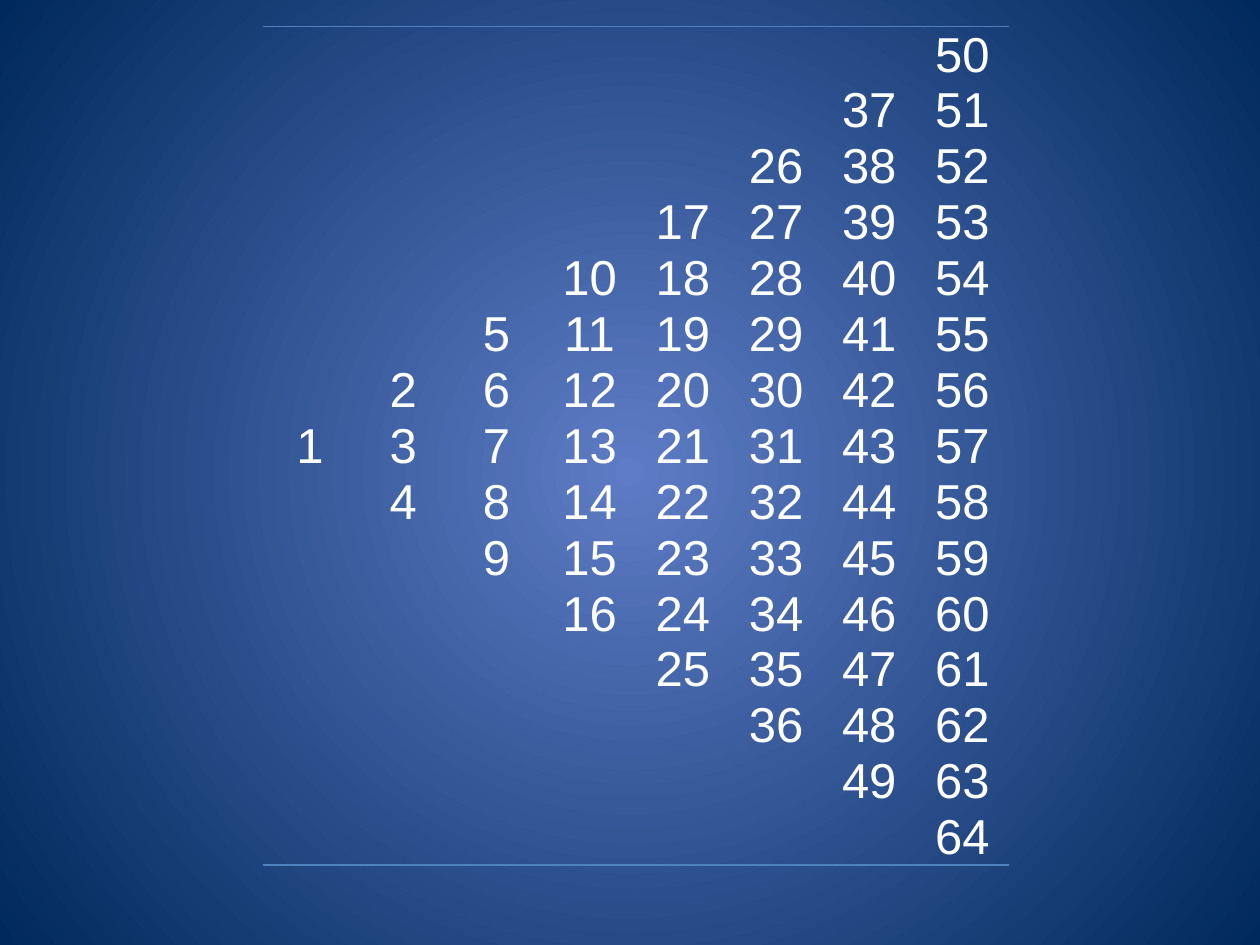
import dataclasses

import lxml.etree
import pptx
import pptx.dml.color
import pptx.enum.text
import pptx.oxml
import pptx.oxml.ns
import pptx.util

Inches = pptx.util.Inches
qn = pptx.oxml.ns.qn


@dataclasses.dataclass(frozen=True)
class Theme:
    center: str = "5E7CC5"
    edge: str = "00295C"
    rule: str = "4F81BD"
    text: str = "FFFFFF"
    font: str = "Arial"
    number_size: int = 28
    rule_width: int = 1


THEME = Theme()
COLUMNS = 8
ROWS = 2 * COLUMNS - 1
NO_GRID_STYLE = "{2D5ABB26-0587-4C30-8999-92F81FD0307C}"


def rgb(value):
    return pptx.dml.color.RGBColor.from_string(value)


def set_radial_background(slide, center, edge):
    fill = slide.background.fill
    fill.gradient()
    for stop, color in zip(fill.gradient_stops, (center, edge)):
        stop.color.rgb = rgb(color)
    gradient = slide.background._cSld.find(".//" + qn("a:gradFill"))
    linear = gradient.find(qn("a:lin"))
    radial = lxml.etree.Element(qn("a:path"), {"path": "circle"})
    lxml.etree.SubElement(radial, qn("a:fillToRect"), {side: "50000" for side in "ltrb"})
    gradient.replace(linear, radial)


def write_text(cell, text, *, size, color, font):
    cell.vertical_anchor = pptx.enum.text.MSO_ANCHOR.BOTTOM
    cell.margin_left = cell.margin_right = cell.margin_top = Inches(0.01)
    cell.margin_bottom = 0
    paragraph = cell.text_frame.paragraphs[0]
    paragraph.alignment = pptx.enum.text.PP_ALIGN.CENTER
    run = paragraph.add_run()
    run.text = text
    run.font.size = pptx.util.Pt(size)
    run.font.name = font
    run.font.color.rgb = rgb(color)


def add_border(cell, tag, *, color, width):
    line = lxml.etree.Element(qn(tag), {"w": str(pptx.util.Pt(width))})
    fill = lxml.etree.SubElement(line, qn("a:solidFill"))
    lxml.etree.SubElement(fill, qn("a:srgbClr"), {"val": color})
    cell._tc.get_or_add_tcPr().insert(0, line)


def add_plain_table(slide, left, top, column_width, row_height):
    frame = slide.shapes.add_table(
        ROWS, COLUMNS, left, top, column_width * COLUMNS, row_height * ROWS)
    table = frame.table
    table.first_row = table.horz_banding = False
    table._tbl.tblPr.find(qn("a:tableStyleId")).text = NO_GRID_STYLE
    for cell in table.iter_cells():
        cell.fill.background()
    return table


def fill_number_triangle(table):
    """Column n holds the numbers after n squared up to the next square, centred vertically."""
    for column in range(COLUMNS):
        first_row = COLUMNS - 1 - column
        for offset in range(2 * column + 1):
            write_text(table.cell(first_row + offset, column),
                       str(column ** 2 + 1 + offset),
                       size=THEME.number_size, color=THEME.text, font=THEME.font)


def add_outer_rules(table):
    for column in range(COLUMNS):
        for row, tag in ((0, "a:lnT"), (ROWS - 1, "a:lnB")):
            add_border(table.cell(row, column), tag,
                       color=THEME.rule, width=THEME.rule_width)


def main():
    presentation = pptx.Presentation()
    presentation.slide_width = Inches(10)
    presentation.slide_height = Inches(7.5)
    slide = presentation.slides.add_slide(presentation.slide_layouts[6])
    set_radial_background(slide, THEME.center, THEME.edge)
    table = add_plain_table(slide, Inches(2.09), Inches(0.21), Inches(0.74), Inches(0.44))
    fill_number_triangle(table)
    add_outer_rules(table)
    presentation.save("out.pptx")


if __name__ == "__main__":
    main()
